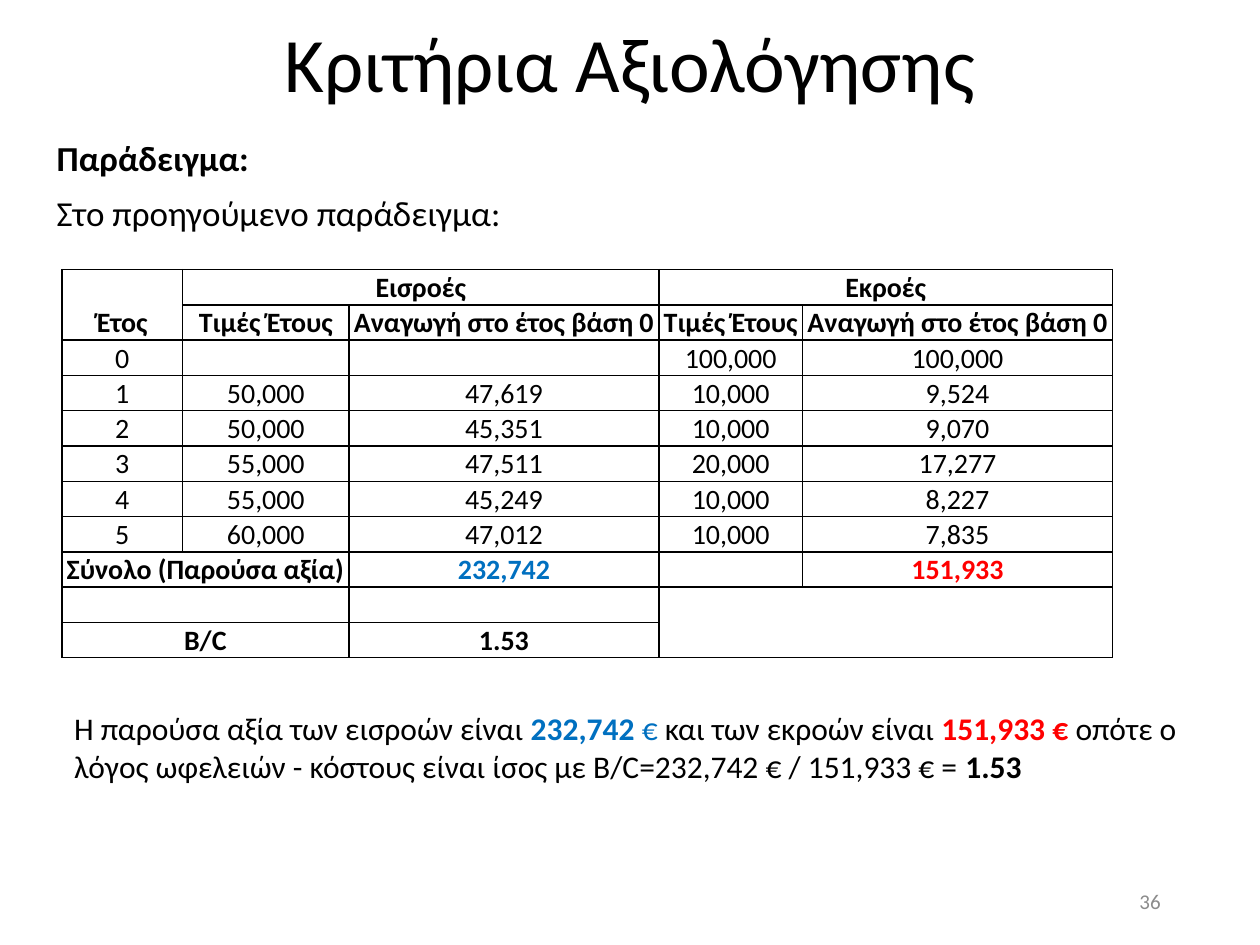
import pptx
import pptx.util
import pptx.dml.color
import pptx.enum.text
import pptx.oxml.ns
from lxml import etree

BLACK = pptx.dml.color.RGBColor(0, 0, 0)
GREY = pptx.dml.color.RGBColor(0x8C, 0x8C, 0x8C)
BLUE = pptx.dml.color.RGBColor(0x00, 0x70, 0xC0)
RED = pptx.dml.color.RGBColor(0xFF, 0, 0)

Inches, Pt = pptx.util.Inches, pptx.util.Pt
ALIGN = pptx.enum.text.PP_ALIGN
ANCHOR = pptx.enum.text.MSO_ANCHOR
qn = pptx.oxml.ns.qn

COLUMNS = [0.96, 1.32, 2.46, 1.14, 2.46]
ROW_HEIGHT = 0.28
TABLE_SIZE = 16
ROWS = [
    ["Έτος", "Εισροές", "", "Εκροές", ""],
    ["", "Τιμές Έτους", "Αναγωγή στο έτος βάση 0", "Τιμές Έτους", "Αναγωγή στο έτος βάση 0"],
    ["0", "", "", "100,000", "100,000"],
    ["1", "50,000", "47,619", "10,000", "9,524"],
    ["2", "50,000", "45,351", "10,000", "9,070"],
    ["3", "55,000", "47,511", "20,000", "17,277"],
    ["4", "55,000", "45,249", "10,000", "8,227"],
    ["5", "60,000", "47,012", "10,000", "7,835"],
    ["Σύνολο (Παρούσα αξία)", "", "232,742", "", "151,933"],
    ["", "", "", "", ""],
    ["B/C", "", "1.53", "", ""],
]
YEAR_ROWS = range(2, 8)  # the only rows that are not bold
TOTAL_COLORS = {(8, 2): BLUE, (8, 4): RED}
# First and last cell of each merged block, as (row, column)
MERGES = [((0, 0), (1, 0)), ((0, 1), (0, 2)), ((0, 3), (0, 4)), ((8, 0), (8, 1)),
          ((9, 0), (9, 1)), ((9, 3), (10, 4)), ((10, 0), (10, 1))]


def style(font, size=None, color=BLACK, bold=False):
    font.name = "Calibri"
    font.color.rgb = color
    font.bold = bold
    if size:
        font.size = Pt(size)


def place(shape, left, top, width, height):
    shape.left, shape.top = Inches(left), Inches(top)
    shape.width, shape.height = Inches(width), Inches(height)


def add_title(slide, text):
    title = slide.shapes.title
    place(title, 0, 0, 10, 1.07)
    title.text_frame.text = text
    title.text_frame.vertical_anchor = ANCHOR.MIDDLE
    line = title.text_frame.paragraphs[0]
    line.alignment = ALIGN.CENTER
    line.line_spacing = 0.9
    style(line.font, 44)


def add_intro(slide, lines):
    intro = slide.placeholders[1]
    place(intro, 0.35, 1.07, 9.49, 1.37)
    intro.text_frame.text = "\n".join(text for text, _ in lines)
    for line, (_, bold) in zip(intro.text_frame.paragraphs, lines):
        line.line_spacing = 0.9
        line.space_before = Pt(10)
        style(line.font, 20, bold=bold)
        # No bullet and no hanging indent
        properties = line._p.get_or_add_pPr()
        properties.set("marL", "0")
        properties.set("indent", "0")
        properties.insert_element_before(
            etree.Element(qn("a:buNone")), "a:tabLst", "a:defRPr", "a:extLst")


def add_borders(cell):
    properties = cell._tc.get_or_add_tcPr()
    for side in ("lnL", "lnR", "lnT", "lnB"):
        border = etree.SubElement(properties, qn("a:" + side), w=str(Pt(1)))
        fill = etree.SubElement(border, qn("a:solidFill"))
        etree.SubElement(fill, qn("a:srgbClr"), val=str(BLACK))


def format_cell(cell, text, color, bold):
    cell.text = text
    cell.vertical_anchor = ANCHOR.BOTTOM
    cell.margin_left = cell.margin_right = cell.margin_top = Inches(0.01)
    cell.margin_bottom = 0
    entry = cell.text_frame.paragraphs[0]
    entry.alignment = ALIGN.CENTER
    style(entry.font, TABLE_SIZE, color, bold)
    if not text:  # keeps empty rows as low as the others
        etree.SubElement(entry._p, qn("a:endParaRPr"), sz=str(TABLE_SIZE * 100))
    add_borders(cell)
    cell.fill.background()


def add_cash_flows(slide):
    flows = slide.shapes.add_table(
        len(ROWS), len(COLUMNS), Inches(0.49), Inches(2.14),
        Inches(sum(COLUMNS)), Inches(ROW_HEIGHT * len(ROWS))).table
    flows.first_row = flows.horz_banding = False
    for column, width in zip(flows.columns, COLUMNS):
        column.width = Inches(width)
    for r, texts in enumerate(ROWS):
        flows.rows[r].height = Inches(ROW_HEIGHT)
        for c, text in enumerate(texts):
            format_cell(flows.cell(r, c), text,
                        TOTAL_COLORS.get((r, c), BLACK), r not in YEAR_ROWS)
    for first, last in MERGES:
        flows.cell(*first).merge(flows.cell(*last))


def add_text(slide, box, size, pieces, alignment=ALIGN.LEFT, anchor=ANCHOR.TOP):
    frame = slide.shapes.add_textbox(*map(Inches, box)).text_frame
    frame.word_wrap = True
    frame.vertical_anchor = anchor
    line = frame.paragraphs[0]
    line.alignment = alignment
    line.font.size = Pt(size)
    for text, color, bold in pieces:
        run = line.add_run()
        run.text = text
        style(run.font, color=color, bold=bold)


def main():
    deck = pptx.Presentation()
    deck.slide_width, deck.slide_height = Inches(10), Inches(7.5)
    slide = deck.slides.add_slide(deck.slide_layouts[1])

    # Heading and introduction
    add_title(slide, "Κριτήρια Αξιολόγησης")
    add_intro(slide, [("Παράδειγμα:", True), ("Στο προηγούμενο παράδειγμα:", False)])

    # Slide number
    add_text(slide, (7.06, 6.95, 2.25, 0.4), 12, [("36", GREY, False)],
             ALIGN.RIGHT, ANCHOR.MIDDLE)

    # Inflows and outflows per year
    add_cash_flows(slide)

    # Conclusion
    add_text(slide, (0.49, 5.58, 9.03, 0.71), 18, [
        ("Η παρούσα αξία των εισροών είναι ", BLACK, False),
        ("232,742", BLUE, True),
        (" € ", BLUE, False),
        ("και των εκροών είναι ", BLACK, False),
        ("151,933 €", RED, True),
        (" οπότε ο λόγος ωφελειών - κόστους είναι ίσος με "
         "B/C=232,742 € / 151,933 € = ", BLACK, False),
        ("1.53", BLACK, True),
    ])

    deck.save("out.pptx")


if __name__ == "__main__":
    main()
